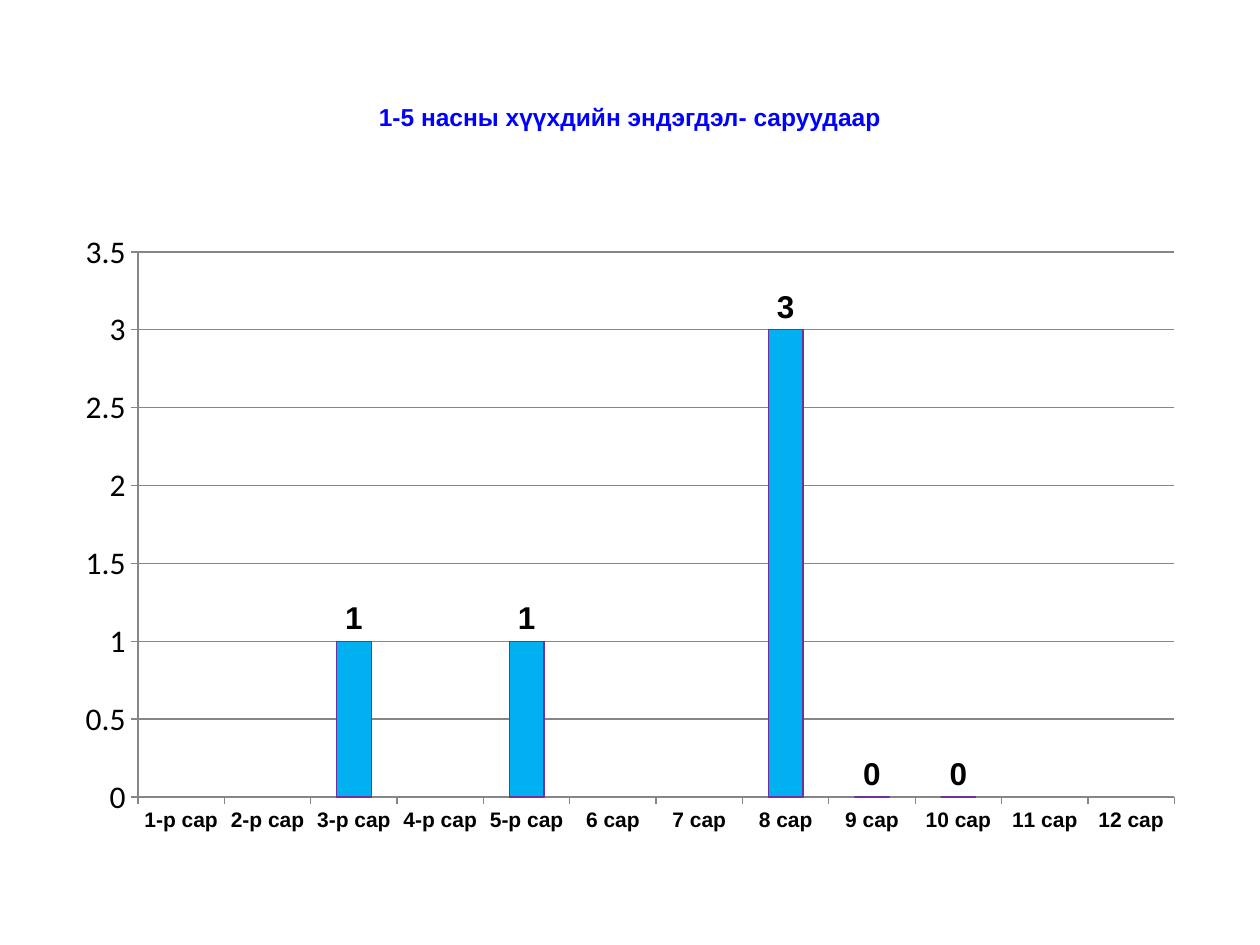
from pptx import Presentation
from pptx.chart.data import CategoryChartData
from pptx.dml.color import RGBColor
from pptx.enum.chart import XL_CHART_TYPE, XL_LABEL_POSITION, XL_TICK_MARK
from pptx.enum.text import MSO_ANCHOR, PP_ALIGN
from pptx.util import Inches, Pt

# Content
TITLE = "1-5 насны хүүхдийн эндэгдэл- саруудаар"
MONTHS = [f"{month}-р сар" if month <= 5 else f"{month} сар" for month in range(1, 13)]
DEATHS = [None, None, 1, None, 1, None, None, 3, 0, 0, None, None]

# Theme
COLORS = {
    name: RGBColor.from_string(value)
    for name, value in {
        "title": "0000FF", "text": "000000", "bar": "00B0F0",
        "outline": "7030A0", "axis": "868686",
    }.items()
}
THEME = {
    "title": {"name": "Arial", "size": Pt(14), "bold": True, "color": COLORS["title"]},
    "chart": {"name": "Calibri", "size": Pt(18), "bold": False, "color": COLORS["text"]},
    "months": {"name": "Arial", "size": Pt(12), "bold": True, "color": COLORS["text"]},
    "labels": {"name": "Arial", "size": Pt(18), "bold": True, "color": COLORS["text"]},
}

# Layout
MARGIN, CONTENT_WIDTH = Inches(0.5), Inches(9)
TITLE_BOX = (MARGIN, Inches(0.3), CONTENT_WIDTH, Inches(1.25))
CHART_BOX = (MARGIN, Inches(1.75), CONTENT_WIDTH, Inches(4.95))


def set_font(font, style):
    for attribute, value in THEME[style].items():
        if attribute == "color":
            font.color.rgb = value
        else:
            setattr(font, attribute, value)


def set_line(line, color, width=0.75):
    line.color.rgb = COLORS[color]
    line.width = Pt(width)


def add_title(slide):
    frame = slide.shapes.add_textbox(*TITLE_BOX).text_frame
    frame.word_wrap = True
    frame.vertical_anchor = MSO_ANCHOR.MIDDLE
    paragraph = frame.paragraphs[0]
    paragraph.alignment = PP_ALIGN.CENTER
    run = paragraph.add_run()
    run.text = TITLE
    set_font(run.font, "title")


def add_monthly_chart(slide):
    data = CategoryChartData()
    data.categories = MONTHS
    data.add_series("Series 1", DEATHS)
    chart = slide.shapes.add_chart(XL_CHART_TYPE.COLUMN_CLUSTERED, *CHART_BOX, data).chart
    chart.has_legend = False
    chart.has_title = False
    set_font(chart.font, "chart")

    # Axes
    for axis in (chart.category_axis, chart.value_axis):
        axis.major_tick_mark = XL_TICK_MARK.OUTSIDE
        axis.minor_tick_mark = XL_TICK_MARK.NONE
        set_line(axis.format.line, "axis")
    set_font(chart.category_axis.tick_labels.font, "months")
    chart.value_axis.has_major_gridlines = True
    set_line(chart.value_axis.major_gridlines.format.line, "axis")
    for attribute, value in {
        "minimum_scale": 0, "maximum_scale": 3.5, "major_unit": 0.5,
    }.items():
        setattr(chart.value_axis, attribute, value)

    # Bars and their values
    plot = chart.plots[0]
    plot.gap_width = 150
    plot.vary_by_categories = False
    series = plot.series[0]
    series.format.fill.solid()
    series.format.fill.fore_color.rgb = COLORS["bar"]
    set_line(series.format.line, "outline")
    labels = series.data_labels
    labels.show_value = True
    labels.position = XL_LABEL_POSITION.OUTSIDE_END
    set_font(labels.font, "labels")


def main():
    presentation = Presentation()
    presentation.slide_width, presentation.slide_height = Inches(10), Inches(7.5)
    slide = presentation.slides.add_slide(presentation.slide_layouts[6])
    add_title(slide)
    add_monthly_chart(slide)
    presentation.save("out.pptx")


if __name__ == "__main__":
    main()
